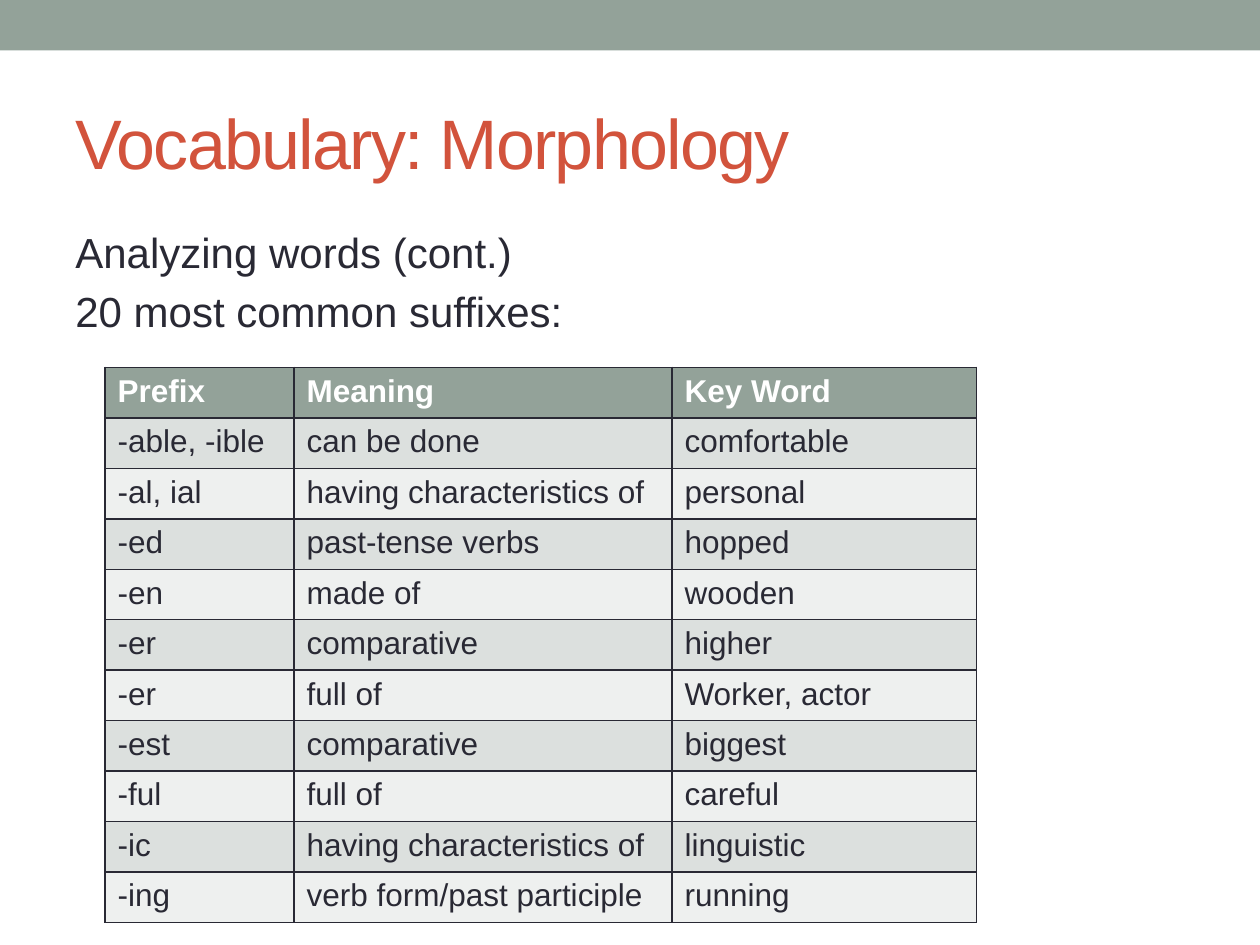
from lxml.etree import SubElement
from pptx import Presentation
from pptx.dml.color import RGBColor
from pptx.enum.shapes import MSO_SHAPE
from pptx.enum.text import MSO_ANCHOR, PP_ALIGN
from pptx.oxml.ns import qn
from pptx.util import Inches, Pt

SAGE, RUST, INK, WHITE = "93A299", "D2533C", "292934", "FFFFFF"
BANDS = ("EEF0EF", "DCE0DE")
ROWS = [
    ("Prefix", "Meaning", "Key Word"),
    ("-able, -ible", "can be done", "comfortable"),
    ("-al, ial", "having characteristics of", "personal"),
    ("-ed", "past-tense verbs", "hopped"),
    ("-en", "made of", "wooden"),
    ("-er", "comparative", "higher"),
    ("-er", "full of", "Worker, actor"),
    ("-est", "comparative", "biggest"),
    ("-ful", "full of", "careful"),
    ("-ic", "having characteristics of", "linguistic"),
    ("-ing", "verb form/past participle", "running"),
]


def paint(target, color):
    target.solid()
    target.fore_color.rgb = RGBColor.from_string(color)


def write(frame, text, size=18, color=INK, bold=False, before=0, track=0):
    frame.word_wrap = True
    frame.text = text
    for par in frame.paragraphs:
        par.alignment = PP_ALIGN.LEFT
        par.space_before = Pt(before)
        for run in par.runs:
            font = run.font
            font.name, font.size, font.bold = "Arial", Pt(size), bold
            paint(font.fill, color)
            if track:
                font._element.set("spc", str(track * 100))


def edge(cell, color, width):
    props = cell._tc.get_or_add_tcPr()
    for place, side in enumerate(("lnL", "lnR", "lnT", "lnB")):
        line = props.makeelement(qn(f"a:{side}"), {"w": str(Pt(width))})
        fill = SubElement(line, qn("a:solidFill"))
        SubElement(fill, qn("a:srgbClr"), val=color)
        props.insert(place, line)


class Deck:
    """Slide builder on a grid of 120 columns by 90 rows."""

    def __init__(self):
        self.show = Presentation()
        self.show.slide_width, self.show.slide_height = Inches(10), Inches(7.5)
        self.slide = self.show.slides.add_slide(self.show.slide_layouts[5])
        self.shapes = self.slide.shapes

    def unit(self, count):
        return round(self.show.slide_width * count / 120)

    def box(self, *counts):
        return [self.unit(count) for count in counts]

    def band(self, *spot, color):
        bar = self.shapes.add_shape(MSO_SHAPE.RECTANGLE, *self.box(*spot))
        bar.shadow.inherit = False
        paint(bar.fill, color)
        bar.line.fill.background()

    def title(self, *spot, text, **style):
        head = self.shapes.title
        head.left, head.top, head.width, head.height = self.box(*spot)
        head.text_frame.vertical_anchor = MSO_ANCHOR.MIDDLE
        write(head.text_frame, text, **style)

    def body(self, *spot, text, **style):
        write(self.shapes.add_textbox(*self.box(*spot)).text_frame, text, **style)

    def table(self, left, top, widths, height, rows):
        spot = self.box(left, top, sum(widths), height * len(rows))
        grid = self.shapes.add_table(len(rows), len(widths), *spot).table
        for column, width in zip(grid.columns, widths):
            column.width = self.unit(width)
        for index, words in enumerate(rows):
            grid.rows[index].height = self.unit(height)
            first = index == 0
            for cell, word in zip(grid.rows[index].cells, words):
                write(cell.text_frame, word, color=WHITE if first else INK, bold=first)
                paint(cell.fill, SAGE if first else BANDS[index % 2])
                edge(cell, INK, 1)


def main():
    deck = Deck()
    deck.band(0, 0, 120, 4.8, color=SAGE)
    deck.title(6, 7, 108, 13, text="Vocabulary: Morphology", size=40, color=RUST, track=-1)
    deck.body(6, 21, 108, 64, text="Analyzing words (cont.)\n20 most common suffixes:",
              size=24, before=4.8)
    deck.table(10, 35, (18, 36, 29), 4.56, ROWS)
    deck.show.save("out.pptx")


if __name__ == "__main__":
    main()
